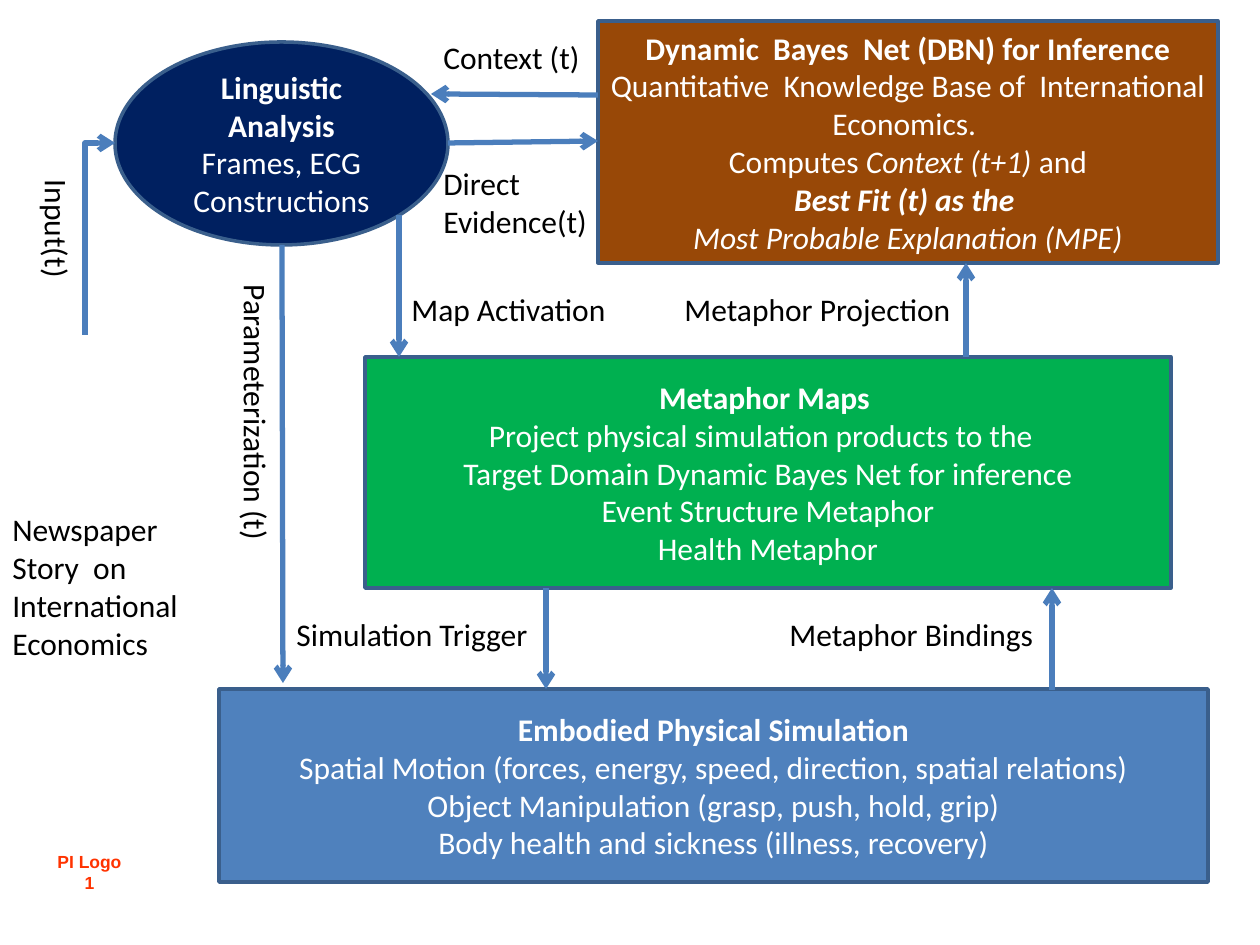
from lxml import etree
from pptx import Presentation
from pptx.dml.color import RGBColor
from pptx.enum.shapes import MSO_CONNECTOR, MSO_SHAPE
from pptx.enum.text import MSO_ANCHOR, MSO_AUTO_SIZE, PP_ALIGN
from pptx.oxml.ns import qn
from pptx.util import Pt

RECT, OVAL = MSO_SHAPE.RECTANGLE, MSO_SHAPE.OVAL
LINE, ELBOW = MSO_CONNECTOR.STRAIGHT, MSO_CONNECTOR.ELBOW
LEFT, CENTER = PP_ALIGN.LEFT, PP_ALIGN.CENTER
MIDDLE = MSO_ANCHOR.MIDDLE
GROW = MSO_AUTO_SIZE.SHAPE_TO_FIT_TEXT

PX = 914400 // 126
SIZE = (1260, 945)
COLORS = {
    "maps": "00B050", "net": "984807", "body": "4F81BD", "words": "002060",
    "edge": "3A5F8C", "arrow": "4B7EBC", "light": "FFFFFF", "dark": "000000",
    "tag": "FF3300",
}

NODES = [
    ("maps", RECT, (365, 357, 806, 231), [
        [("Metaphor Maps ", "b")],
        [("Project physical simulation products to the  ", "")],
        [("Target Domain Dynamic Bayes Net for inference", "")],
        [("Event Structure Metaphor", "")],
        [("Health Metaphor", "")],
    ]),
    ("net", RECT, (598, 21, 620, 242), [
        [("Dynamic  Bayes  Net (DBN) for Inference", "b")],
        [("Quantitative  Knowledge Base of  International Economics. ", "")],
        [("Computes", ""), (" Context (t+1) ", "i"), ("and", "")],
        [("Best Fit (t) as the ", "bi")],
        [(" ", "bi"), ("Most Probable Explanation (MPE) ", "i")],
    ]),
    ("body", RECT, (219, 689, 989, 193), [
        [("Embodied Physical Simulation", "b")],
        [("Spatial Motion (forces, energy, speed, direction, spatial relations)", "")],
        [("Object Manipulation (grasp, push, hold, grip)", "")],
        [("Body health and sickness (illness, recovery)", "")],
    ]),
    ("words", OVAL, (115, 42, 333, 203), [
        [("Linguistic Analysis", "b")],
        [("Frames, ECG", "")],
        [("Constructions", "")],
    ]),
]

ARROWS = [
    (282, 245, 283, 683),
    (448, 143, 598, 141),
    (546, 588, 546, 689),
    (1052, 690, 1052, 588),
    (966, 357, 966, 263),
    (598, 95, 431, 94),
    (399, 215, 399, 357),
]
INPUT = (85, 336, 115, 143)

LABELS = [
    ((431, 32, 162, 50), 0, False, ["Context (t)"]),
    ((431, 158, 170, 89), 0, False, ["Direct", "Evidence(t)"]),
    ((0, 504, 199, 204), 0, True, ["Newspaper", "Story  on International Economics"]),
    ((115, 389, 283, 50), 90, False, ["Parameterization (t)"]),
    ((284, 609, 259, 50), 0, False, ["Simulation Trigger"]),
    ((672, 284, 295, 50), 0, False, ["Metaphor Projection"]),
    ((777, 609, 272, 50), 0, False, ["Metaphor Bindings"]),
    ((399, 284, 222, 50), 0, False, ["Map Activation"]),
    ((-5, 205, 125, 50), 90, False, ["Input(t)"]),
]
TAG = (45, 845, 89, 54)


def scale(nums):
    return [n * PX for n in nums]


def rgb(name):
    return RGBColor.from_string(COLORS[name])


def write(frame, rows, color, align, size=18, face="Calibri"):
    for n, row in enumerate(rows):
        para = frame.paragraphs[0] if n == 0 else frame.add_paragraph()
        para.alignment = align
        font = para.font
        font.name, font.size = face, Pt(size)
        font.color.rgb = rgb(color)
        for text, style in row:
            run = para.add_run()
            run.text = text
            run.font.bold = "b" in style
            run.font.italic = "i" in style


def add_node(shapes, color, kind, box, rows):
    node = shapes.add_shape(kind, *scale(box))
    node.shadow.inherit = False
    node.fill.solid()
    node.fill.fore_color.rgb = rgb(color)
    node.line.color.rgb = rgb("edge")
    node.line.width = Pt(2)
    frame = node.text_frame
    frame.word_wrap = True
    frame.vertical_anchor = MIDDLE
    write(frame, rows, "light", CENTER)


def add_arrow(shapes, ends, kind=LINE):
    arrow = shapes.add_connector(kind, *scale(ends))
    arrow.line.color.rgb = rgb("arrow")
    arrow.line.width = Pt(3)
    etree.SubElement(arrow.line._get_or_add_ln(), qn("a:tailEnd"), type="arrow")
    props = arrow._element.spPr
    etree.SubElement(props, qn("a:effectLst"))
    return props


def add_bend(shapes, ends):
    x1, y1, x2, y2 = ends
    mid, half = (x1 + x2) / 2, (y1 + y2) / 2
    wide, high = (y1 - y2) / 2, (x2 - x1) / 2
    turned = [round(n) for n in (mid + wide, half + high, mid - wide, half - high)]
    props = add_arrow(shapes, turned, ELBOW)
    props.find(qn("a:prstGeom")).set("prst", "bentConnector2")
    props.find(qn("a:xfrm")).set("rot", str(90 * 60000))


def add_label(shapes, box, turn, wrap):
    label = shapes.add_textbox(*scale(box))
    label.rotation = turn
    frame = label.text_frame
    frame.word_wrap = wrap
    frame.auto_size = GROW
    return frame


def main():
    deck = Presentation()
    deck.slide_width, deck.slide_height = scale(SIZE)
    shapes = deck.slides.add_slide(deck.slide_layouts[6]).shapes

    tag = add_label(shapes, TAG, 0, True)
    tag.margin_left = tag.margin_right = 9 * PX
    write(tag, [[("PI Logo 1", "b")]], "tag", CENTER, 10, "Arial")

    for node in NODES:
        add_node(shapes, *node)
    for ends in ARROWS:
        add_arrow(shapes, ends)
    add_bend(shapes, INPUT)
    for box, turn, wrap, lines in LABELS:
        frame = add_label(shapes, box, turn, wrap)
        write(frame, [[(line, "")] for line in lines], "dark", LEFT)
    deck.save("out.pptx")


if __name__ == "__main__":
    main()
